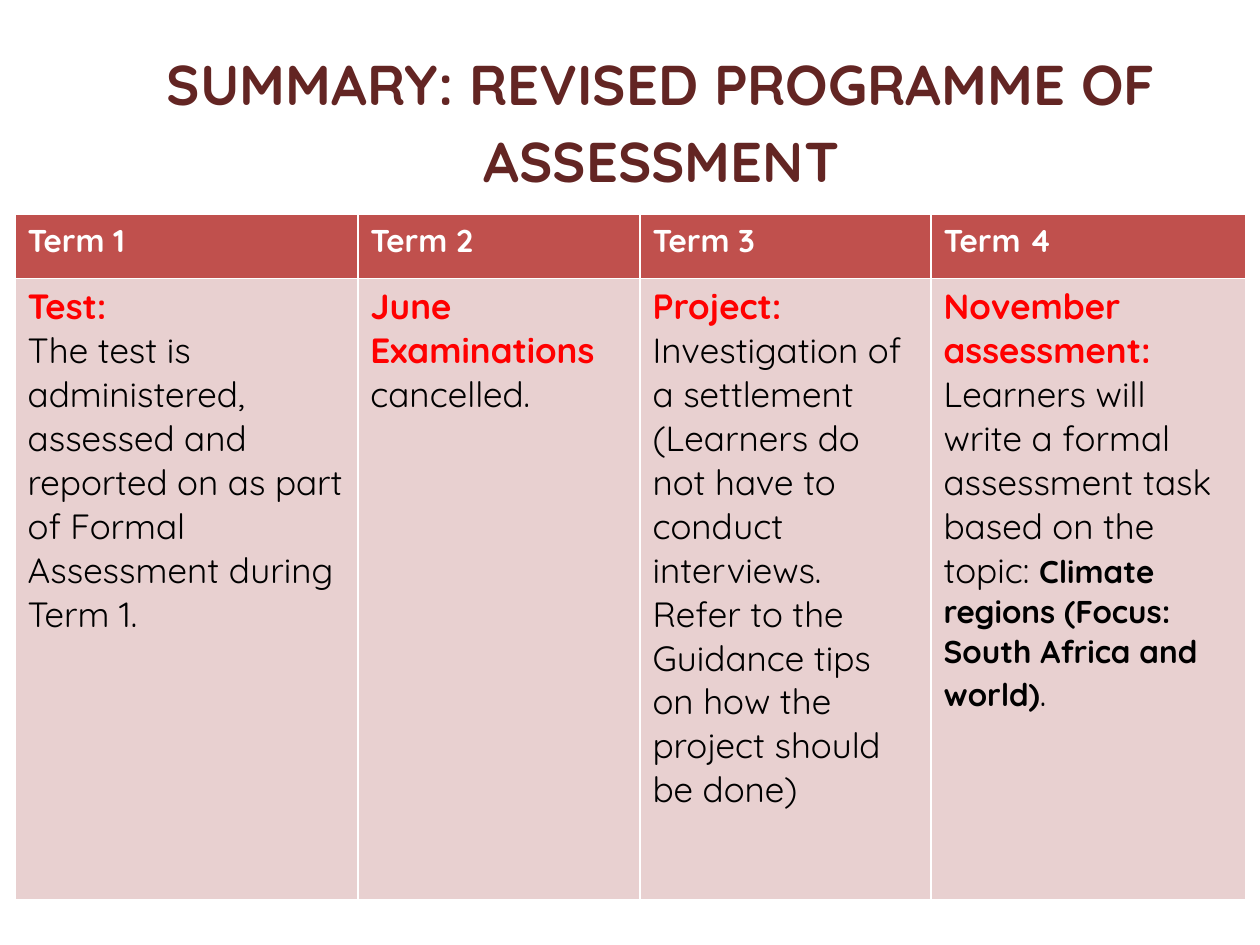
from dataclasses import dataclass

from pptx import Presentation
from pptx.dml.color import RGBColor
from pptx.enum.text import MSO_ANCHOR, MSO_AUTO_SIZE, PP_ALIGN
from pptx.util import Inches, Pt


@dataclass(frozen=True)
class Theme:
    font: str = "Quicksand"
    title: str = "632523"
    head: str = "C0504D"
    body: str = "E8D0D0"
    white: str = "FFFFFF"
    red: str = "FF0000"
    black: str = "000000"
    big: int = 32
    text: int = 20
    small: int = 18


THEME = Theme()
WIDTHS = [2.72, 2.24, 2.31, 2.5]
HEIGHTS = [0.51, 4.93]

HEAD = (THEME.small, THEME.white, True)
LEAD = (THEME.text, THEME.red, True)
PLAIN = (THEME.text, THEME.black, False)
TOPIC = (THEME.small, THEME.black, True)

TERMS = [
    ("Term 1", [
        [("Test:", LEAD)],
        [("The test is administered, assessed and reported on as part of "
          "Formal Assessment during Term 1.", PLAIN)],
    ]),
    ("Term 2", [
        [("June Examinations ", LEAD), ("cancelled.", PLAIN)],
    ]),
    ("Term 3", [
        [("Project:", LEAD)],
        [("Investigation of a settlement (Learners do not have to conduct "
          "interviews. Refer to the Guidance tips on how the project should "
          "be done)", PLAIN)],
    ]),
    ("Term 4", [
        [("November assessment:", LEAD)],
        [("Learners will write a formal assessment task based on the topic: ",
          PLAIN),
         ("Climate regions (Focus: South Africa and world)", TOPIC),
         (".", PLAIN)],
    ]),
]


def add_run(para, text, style):
    size, color, bold = style
    run = para.add_run()
    run.text = text
    run.font.name = THEME.font
    run.font.size = Pt(size)
    run.font.bold = bold
    run.font.color.rgb = RGBColor.from_string(color)


def fill_cell(cell, paras, color):
    cell.fill.solid()
    cell.fill.fore_color.rgb = RGBColor.from_string(color)
    frame = cell.text_frame
    for index, runs in enumerate(paras):
        para = frame.add_paragraph() if index else frame.paragraphs[0]
        for text, style in runs:
            add_run(para, text, style)


def add_title(slide, left, top, width, height):
    title = slide.shapes.title
    title.left, title.top = Inches(left), Inches(top)
    title.width, title.height = Inches(width), Inches(height)
    frame = title.text_frame
    frame.word_wrap = True
    frame.auto_size = MSO_AUTO_SIZE.NONE
    frame.vertical_anchor = MSO_ANCHOR.MIDDLE
    para = frame.paragraphs[0]
    para.alignment = PP_ALIGN.CENTER
    para.line_spacing = 1.15
    para.space_after = Pt(6)
    props = para._p.get_or_add_pPr()
    props.set("marL", str(Inches(0.5)))
    props.set("indent", "0")
    add_run(para, "SUMMARY: REVISED PROGRAMME OF ASSESSMENT",
            (THEME.big, THEME.title, True))


def add_terms(slide, left, top, width, height):
    table = slide.shapes.add_table(
        len(HEIGHTS), len(TERMS), Inches(left), Inches(top),
        Inches(width), Inches(height)).table
    for row, size in zip(table.rows, HEIGHTS):
        row.height = Inches(size)
    for index, (name, paras) in enumerate(TERMS):
        table.columns[index].width = Inches(WIDTHS[index])
        fill_cell(table.cell(0, index), [[(name, HEAD)]], THEME.head)
        fill_cell(table.cell(1, index), paras, THEME.body)


def main():
    deck = Presentation()
    deck.slide_width, deck.slide_height = Inches(10), Inches(7.5)
    slide = deck.slides.add_slide(deck.slide_layouts[5])
    add_title(slide, 0, 0.3, 10, 1.25)
    add_terms(slide, 0.12, 1.7, sum(WIDTHS), sum(HEIGHTS))
    deck.save("out.pptx")


if __name__ == "__main__":
    main()
